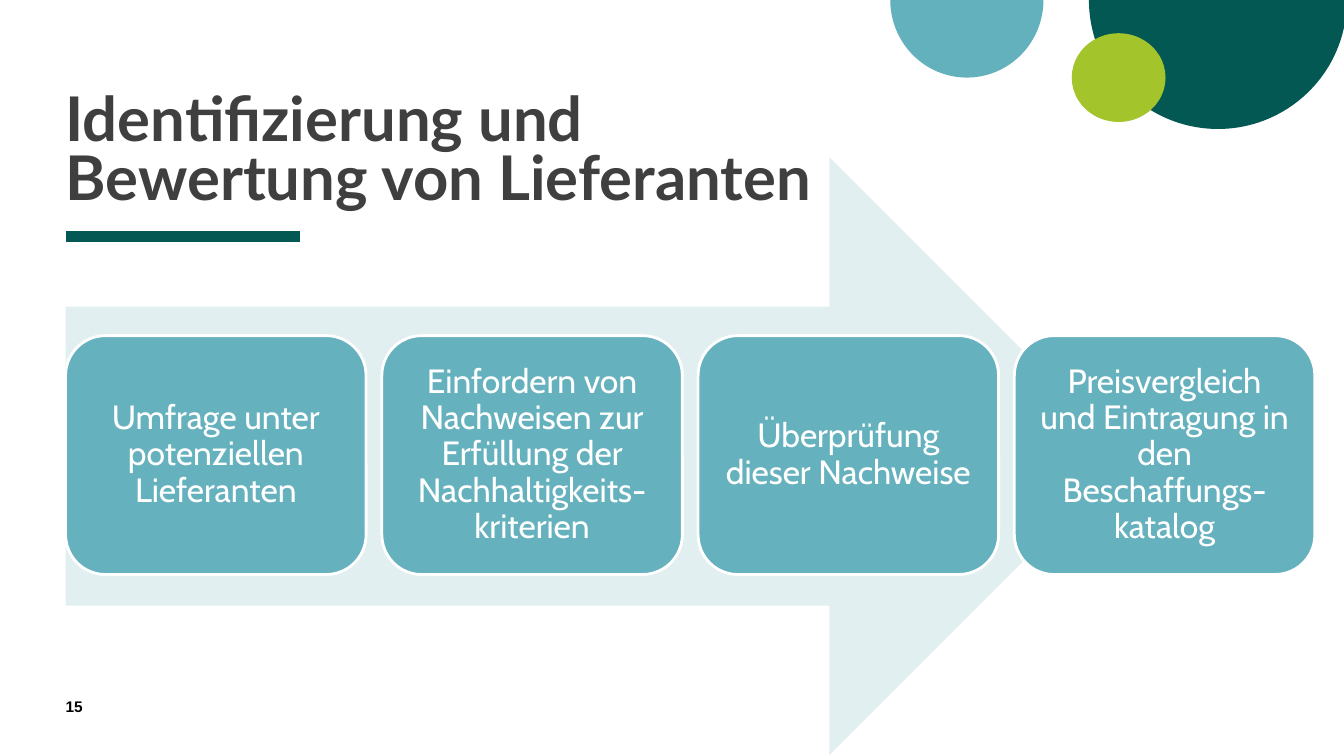
from dataclasses import dataclass

from lxml import etree
from pptx import Presentation
from pptx.dml.color import RGBColor
from pptx.enum.shapes import MSO_CONNECTOR, MSO_SHAPE
from pptx.enum.text import MSO_ANCHOR, PP_ALIGN
from pptx.oxml.ns import qn
from pptx.util import Inches, Pt

STRAIGHT = MSO_CONNECTOR.STRAIGHT
PIE, OVAL = MSO_SHAPE.PIE, MSO_SHAPE.OVAL
ARROW, ROUNDED = MSO_SHAPE.RIGHT_ARROW, MSO_SHAPE.ROUNDED_RECTANGLE
TOP, MIDDLE, BOTTOM = MSO_ANCHOR.TOP, MSO_ANCHOR.MIDDLE, MSO_ANCHOR.BOTTOM
LEFT, CENTER = PP_ALIGN.LEFT, PP_ALIGN.CENTER

HALF_TURN = 108
MARGIN = 4.88
CARD_WIDTH = 22.36
CARD_PITCH = 23.53
STEPS = (
    "Umfrage unter potenziellen Lieferanten",
    "Einfordern von Nachweisen zur Erfüllung der Nachhaltigkeits-kriterien",
    "Überprüfung dieser Nachweise",
    "Preisvergleich und Eintragung in den Beschaffungs- katalog",
)


@dataclass(frozen=True)
class Theme:
    dark: str = "035854"
    teal: str = "64B1BE"
    card: str = "65B1BE"
    lime: str = "A3C42A"
    pale: str = "E1EFF1"
    white: str = "FFFFFF"
    ink: str = "3F3F3F"
    black: str = "000000"
    title_font: str = "Lato"
    body_font: str = "Cabin"
    number_font: str = "Arial"
    title_size: int = 44
    body_size: int = 24
    number_size: int = 11
    rule_width: int = 8
    card_line: int = 2
    card_inset: int = 8


def assign(target, values):
    for name, value in values.items():
        setattr(target, name, value)


class SlideBuilder:
    """Draws styled elements placed in percent of the slide's size."""

    def __init__(self, presentation, theme):
        self.presentation = presentation
        self.theme = theme
        self.slide = presentation.slides.add_slide(presentation.slide_layouts[6])

    def place(self, left, top, width, height):
        across = self.presentation.slide_width / 100
        down = self.presentation.slide_height / 100
        return (round(left * across), round(top * down),
                round(width * across), round(height * down))

    def shape(self, kind, box, color, adjustments=()):
        shape = self.slide.shapes.add_shape(kind, *self.place(*box))
        shape.shadow.inherit = False
        shape.fill.solid()
        shape.fill.fore_color.rgb = RGBColor.from_string(color)
        shape.line.fill.background()
        for index, value in enumerate(adjustments):
            shape.adjustments[index] = value
        return shape

    def rule(self, left, top, width):
        x, y, length, _ = self.place(left, top, width, 0)
        rule = self.slide.shapes.add_connector(STRAIGHT, x, y, x + length, y)
        rule.line.color.rgb = RGBColor.from_string(self.theme.dark)
        rule.line.width = Pt(self.theme.rule_width)
        etree.SubElement(rule.element.spPr, qn("a:effectLst"))

    def label(self, shape, text, font, color, anchor=TOP, align=LEFT, spacing=1.0, inset=0):
        frame = shape.text_frame
        sides = ("margin_left", "margin_top", "margin_right", "margin_bottom")
        assign(frame, dict.fromkeys(sides, Pt(inset)))
        assign(frame, {"word_wrap": True, "vertical_anchor": anchor})
        paragraph = frame.paragraphs[0]
        assign(paragraph, {"text": text, "alignment": align, "line_spacing": spacing})
        assign(paragraph.runs[0].font, font)
        paragraph.runs[0].font.color.rgb = RGBColor.from_string(color)

    def text(self, box, text, font, color, **layout):
        shape = self.slide.shapes.add_textbox(*self.place(*box))
        self.label(shape, text, font, color, **layout)

    def card(self, box, text):
        theme = self.theme
        card = self.shape(ROUNDED, box, theme.card)
        card.line.color.rgb = RGBColor.from_string(theme.white)
        card.line.width = Pt(theme.card_line)
        font = {"name": theme.body_font, "size": Pt(theme.body_size)}
        self.label(card, text, font, theme.white, anchor=MIDDLE, align=CENTER,
                   spacing=0.9, inset=theme.card_inset)


def main():
    theme = Theme()
    presentation = Presentation()
    assign(presentation, {"slide_width": Inches(13.33), "slide_height": Inches(7.5)})
    builder = SlideBuilder(presentation, theme)

    builder.shape(PIE, (81.02, -17.07, 19.2, 34.13), theme.dark, (0, HALF_TURN))
    builder.rule(MARGIN, 31.33, 17.48)
    builder.shape(PIE, (66.24, -10.27, 11.4, 20.53), theme.teal, (0, HALF_TURN))
    builder.shape(OVAL, (79.74, 4.4, 6.98, 11.73), theme.lime)

    title_font = {"name": theme.title_font, "size": Pt(theme.title_size), "bold": True}
    builder.text((MARGIN, 4.93, 55.66, 23.2), "Identifizierung und Bewertung von Lieferanten",
                 title_font, theme.ink, anchor=BOTTOM, spacing=0.8)
    number_font = {"name": theme.number_font, "size": Pt(theme.number_size), "bold": True}
    builder.text((MARGIN, 92.27, 4.28, 3.6), "15", number_font, theme.black)

    builder.shape(ARROW, (MARGIN, 20.8, 79.07, 79.07), theme.pale, (0.5, 0.5))
    for index, step in enumerate(STEPS):
        builder.card((MARGIN + index * CARD_PITCH, 44.4, CARD_WIDTH, 31.6), step)

    presentation.save("out.pptx")


if __name__ == "__main__":
    main()
